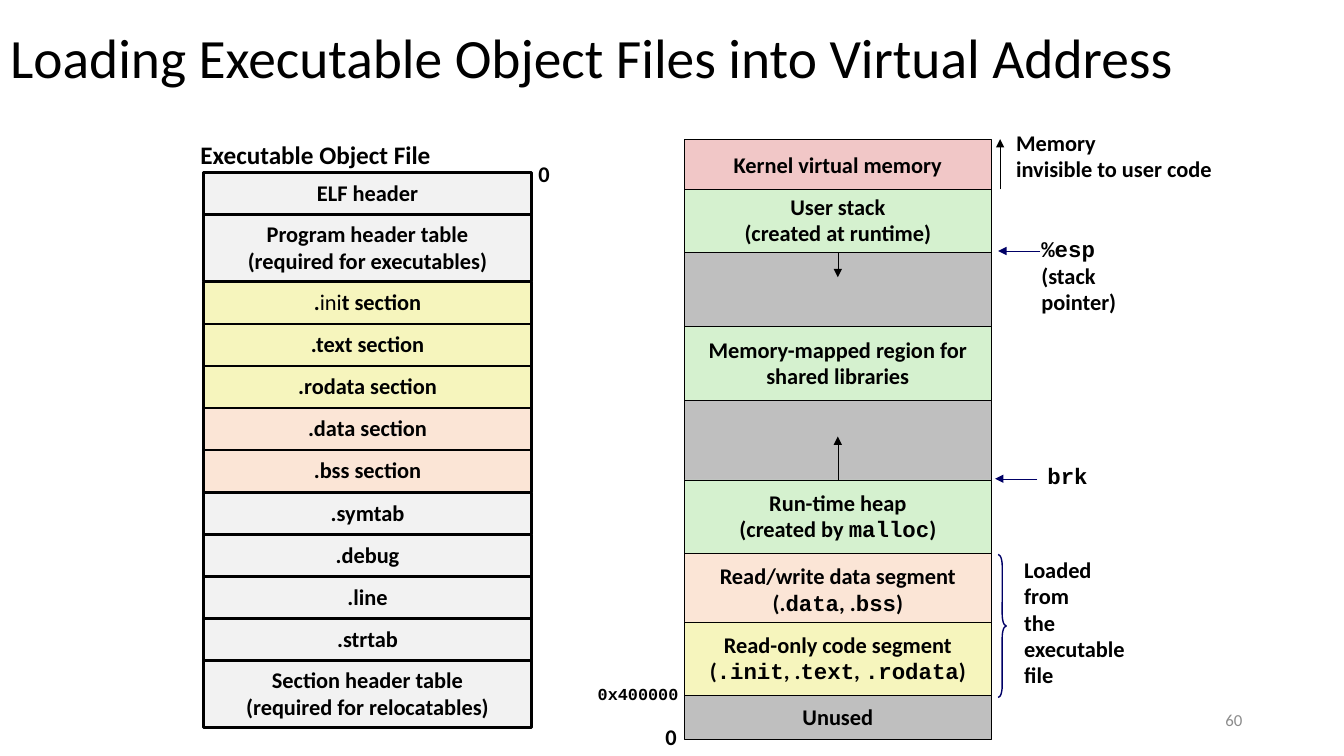
from dataclasses import dataclass

from lxml import etree
from pptx import Presentation
from pptx.dml.color import RGBColor
from pptx.enum.shapes import MSO_CONNECTOR as Connector, MSO_SHAPE as Shape
from pptx.enum.text import MSO_ANCHOR as Anchor, MSO_AUTO_SIZE as AutoSize, PP_ALIGN as Align
from pptx.oxml.ns import qn
from pptx.util import Emu, Pt

PX = 9144  # 100 px to the inch


@dataclass(frozen=True)
class Theme:
    sans: str = "Calibri"
    mono: str = "Courier New"
    black: str = "000000"
    navy: str = "000066"
    muted: str = "8C8C8C"
    header: str = "F2F2F2"
    code: str = "F6F5BD"
    data: str = "FBE5D6"
    kernel: str = "F1C7C7"
    runtime: str = "D5F1CF"
    empty: str = "BFBFBF"
    title_size: float = 39.6
    heading_size: int = 18
    body_size: int = 16
    small_size: int = 12
    thick: float = 2
    thin: float = 0.25


class Diagram:
    def __init__(self, slide, theme):
        self.slide, self.theme = slide, theme

    @staticmethod
    def lengths(*pixels):
        return [Emu(round(value * PX)) for value in pixels]

    def set_text(self, frame, text, size, align, color=None, bold=True, light=False):
        """Set one paragraph a line; parts between backticks are mono, or not bold if light."""
        theme = self.theme
        for index, line in enumerate(text.split("\n")):
            paragraph = frame.paragraphs[0] if index == 0 else frame.add_paragraph()
            paragraph.alignment = align
            all_mono = line.startswith("`") and line.count("`") == 2 and line.endswith("`")
            paragraph.line_spacing = 0.94 if all_mono else 0.98
            font = paragraph.font
            font.name = theme.mono if all_mono else theme.sans
            font.size, font.bold = Pt(size), bold
            font.color.rgb = RGBColor.from_string(color or theme.black)
            for part_index, part in enumerate(line.split("`")):
                if not part:
                    continue
                run = paragraph.add_run()
                run.text = part
                if part_index % 2 and light:
                    run.font.bold = False
                elif part_index % 2 and not all_mono:
                    run.font.name = theme.mono

    def title(self, text, box):
        title = self.slide.shapes.title
        title.left, title.top, title.width, title.height = self.lengths(*box)
        frame = title.text_frame
        frame.auto_size, frame.vertical_anchor = AutoSize.NONE, Anchor.MIDDLE
        self.set_text(frame, text, self.theme.title_size, Align.LEFT, bold=False)
        frame.paragraphs[0].line_spacing = 0.9

    def block(self, text, box, fill, line_width, light=False):
        shape = self.slide.shapes.add_shape(Shape.RECTANGLE, *self.lengths(*box))
        shape.shadow.inherit = False
        shape.fill.solid()
        shape.fill.fore_color.rgb = RGBColor.from_string(fill)
        shape.line.color.rgb = RGBColor.from_string(self.theme.black)
        shape.line.width = Pt(line_width)
        if text:
            frame = shape.text_frame
            frame.word_wrap, frame.vertical_anchor = False, Anchor.MIDDLE
            self.set_text(frame, text, self.theme.body_size, Align.CENTER, light=light)
        return shape

    def label(self, text, box, size=None, align=Align.LEFT, wrap=False):
        frame = self.slide.shapes.add_textbox(*self.lengths(*box)).text_frame
        frame.word_wrap, frame.auto_size = wrap, AutoSize.SHAPE_TO_FIT_TEXT
        self.set_text(frame, text, size or self.theme.body_size, align)

    def page_number(self, text, box):
        frame = self.slide.shapes.add_textbox(*self.lengths(*box)).text_frame
        frame.word_wrap, frame.vertical_anchor = True, Anchor.MIDDLE
        self.set_text(frame, text, self.theme.small_size, Align.RIGHT, self.theme.muted, bold=False)

    def arrow(self, start, end, color, source=None, site=0):
        connector = self.slide.shapes.add_connector(
            Connector.STRAIGHT, *self.lengths(*start, *end))
        if source is not None:
            connector.begin_connect(source, site)
        connector.line.color.rgb = RGBColor.from_string(color)
        connector.line.width = Pt(self.theme.thin)
        properties = connector._element.spPr
        etree.SubElement(properties.find(qn("a:ln")), qn("a:tailEnd"), type="triangle")
        etree.SubElement(properties, qn("a:effectLst"))

    def brace(self, box):
        shape = self.slide.shapes.add_shape(Shape.RIGHT_BRACE, *self.lengths(*box))
        shape.shadow.inherit = False
        shape.adjustments[0] = 1.417
        shape.fill.background()
        shape.line.color.rgb = RGBColor.from_string(self.theme.navy)
        shape.line.width = Pt(1)


def draw_object_file(diagram):
    theme = diagram.theme
    sections = [
        ("ELF header", theme.header),
        ("Program header table\n(required for executables)", theme.header),
        (".`ini`t section", theme.code),
        (".text section", theme.code),
        (".rodata section", theme.code),
        (".data section", theme.data),
        (".bss section", theme.data),
        (".symtab", theme.header),
        (".debug", theme.header),
        (".line", theme.header),
        (".strtab", theme.header),
        ("Section header table\n(required for relocatables)", theme.header),
    ]
    top = 171
    for text, fill in sections:
        height = 67 if "\n" in text else 41.7
        diagram.block(text, (202, top, 325, height), fill, theme.thick, light=True)
        top += height
    diagram.label("Executable Object File", (188, 135, 250, 40), theme.heading_size, Align.CENTER)
    diagram.label("0", (524, 155, 31, 37))


def draw_address_space(diagram):
    theme = diagram.theme
    left, width = 679, 304
    middle = left + width // 2
    regions = [
        ("Kernel virtual memory", 138, 53, theme.kernel),
        ("Memory-mapped region for\nshared libraries", 324, 73, theme.runtime),
        ("", 397, 79, theme.empty),
        ("Run-time heap\n(created by `malloc`)", 476, 73, theme.runtime),
        ("", 225, 99, theme.empty),
        ("User stack\n(created at runtime)", 188, 62, theme.runtime),
        ("Unused", 690, 43, theme.empty),
        ("Read/write data segment\n(.`data`, .`bss`)", 549, 73, theme.data),
        ("Read-only code segment\n(`.init`, .`text`, `.rodata`)", 617, 73, theme.code),
    ]
    blocks = {}
    for text, top, height, fill in regions:
        name = text.split("\n")[0]
        blocks[name] = diagram.block(text, (left, top, width, height), fill, theme.thin)

    diagram.arrow((middle, 476), (middle, 433), theme.black, blocks["Run-time heap"], 0)
    diagram.arrow((middle, 250), (middle, 275), theme.black, blocks["User stack"], 2)
    diagram.arrow((992, 188), (992, 138), theme.black)
    diagram.arrow((1032, 249), (990, 249), theme.navy)
    diagram.arrow((1029, 475), (987, 475), theme.navy)
    diagram.brace((990, 550, 8, 142))

    diagram.label("Memory\ninvisible to user code", (998, 124, 280, 63), wrap=True)
    diagram.label("`%esp`\n(stack\npointer)", (1023, 231, 95, 88))
    diagram.label("`brk`", (1029, 456, 60, 36))
    diagram.label("Loaded\nfrom\nthe\nexecutable\nfile", (1006, 548, 126, 142))
    diagram.label("`0x400000`", (583, 675, 101, 30), theme.small_size)
    diagram.label("0", (650, 714, 31, 37))


def main():
    presentation = Presentation()
    presentation.slide_width, presentation.slide_height = Diagram.lengths(1333, 750)
    slide = presentation.slides.add_slide(presentation.slide_layouts.get_by_name("Title Only"))
    diagram = Diagram(slide, Theme())
    diagram.title("Loading Executable Object Files into Virtual Address", (0, -5, 1242, 130))
    draw_object_file(diagram)
    draw_address_space(diagram)
    diagram.page_number("60", (942, 695, 300, 40))
    presentation.save("out.pptx")


if __name__ == "__main__":
    main()
